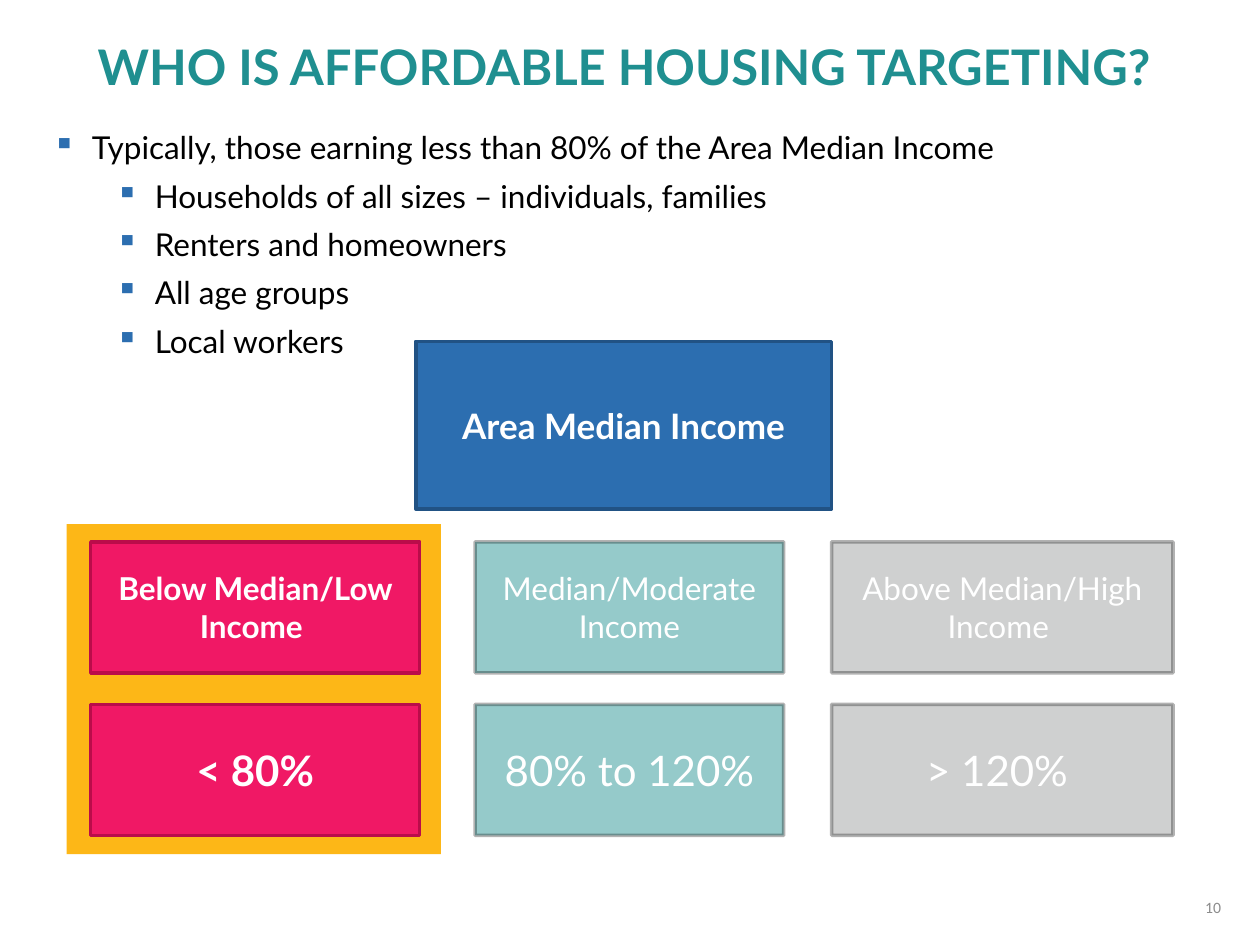
from pptx import Presentation
from pptx.dml.color import RGBColor
from pptx.enum.shapes import MSO_SHAPE
from pptx.enum.text import MSO_ANCHOR, PP_ALIGN
from pptx.oxml.ns import qn
from pptx.util import Inches, Pt
from lxml.etree import SubElement

THEME = {
    "font": "Lato", "number_font": "Calibri",
    "teal": "1F8F90", "blue": "2C6EB0", "navy": "215284", "pink": "F01865",
    "crimson": "BA0C4A", "gray": "959898", "gold": "FDB717",
    "white": "FFFFFF", "black": "000000", "number": "8C8C8C",
    "title_pt": 28, "root_pt": 20, "body_pt": 18, "range_pt": 24, "number_pt": 9,
}

TITLE = "WHO IS AFFORDABLE HOUSING TARGETING? "
BULLETS = [
    (0, "Typically, those earning less than 80% of the Area Median Income"),
    (1, "Households of all sizes – individuals, families"),
    (1, "Renters and homeowners"),
    (1, "All age groups"),
    (1, "Local workers"),
]
ROOT = "Area Median Income"
# name, income range, left, width, fill, fill opacity %, line, line opacity %, bold
BANDS = [
    ("Below Median/Low Income ", "< 80%", 0.72, 2.61, "pink", 100, "crimson", 100, True),
    ("Median/Moderate Income", "80% to 120%", 3.77, 2.45, "teal", 47, "black", 30, False),
    ("Above Median/High Income ", "> 120% ", 6.6, 2.71, "gray", 45, "black", 30, False),
]
ROWS = [(4.3, "body_pt"), (5.59, "range_pt")]
BAND_HEIGHT = 1.04


def rgb(name):
    return RGBColor.from_string(THEME[name])


def set_opacity(fill_parent, percent):
    """Make the solid fill directly under the given XML element see-through."""
    if percent < 100:
        color = fill_parent.find(qn("a:solidFill")).find(qn("a:srgbClr"))
        SubElement(color, qn("a:alpha"), val=str(percent * 1000))


def add_run(p, text, size, color, bold=False, font="font"):
    r = p.add_run()
    r.text = text
    r.font.name = THEME[font]
    r.font.size = Pt(THEME[size])
    r.font.bold = bold
    r.font.color.rgb = rgb(color)


def add_text_box(s, box):
    tf = s.shapes.add_textbox(*map(Inches, box)).text_frame
    tf.word_wrap = True
    return tf


def add_box(s, box, fill, line=None, fill_opacity=100, line_opacity=100):
    sp = s.shapes.add_shape(MSO_SHAPE.RECTANGLE, *map(Inches, box))
    sp.shadow.inherit = False
    sp.fill.solid()
    sp.fill.fore_color.rgb = rgb(fill)
    set_opacity(sp.element.spPr, fill_opacity)
    if line:
        sp.line.color.rgb = rgb(line)
        sp.line.width = Pt(2)
        set_opacity(sp.element.spPr.find(qn("a:ln")), line_opacity)
    else:
        sp.line.fill.background()
    return sp


def add_label(sp, text, size, bold):
    tf = sp.text_frame
    tf.word_wrap = True
    tf.vertical_anchor = MSO_ANCHOR.MIDDLE
    p = tf.paragraphs[0]
    p.alignment = PP_ALIGN.CENTER
    add_run(p, text, size, "white", bold)


def add_bullet(p, level):
    p.level = level
    pPr = p._p.get_or_add_pPr()
    pPr.set("marL", str(Inches(0.31 + 0.5 * level)))
    pPr.set("indent", str(Inches(-0.31)))
    color = SubElement(pPr, qn("a:buClr"))
    SubElement(color, qn("a:srgbClr"), val=THEME["blue"])
    SubElement(pPr, qn("a:buChar"), char="▪")


def add_bullets(s, box):
    tf = add_text_box(s, box)
    for i, (level, text) in enumerate(BULLETS):
        p = tf.add_paragraph() if i else tf.paragraphs[0]
        add_bullet(p, level)
        if i:
            p.space_before = Pt(6)
        add_run(p, text, "body_pt", "black")


def main():
    prs = Presentation()
    prs.slide_width, prs.slide_height = Inches(10), Inches(7.5)
    s = prs.slides.add_slide(prs.slide_layouts[6])

    add_box(s, (0.53, 4.16, 2.97, 2.62), "gold")

    p = add_text_box(s, (0, 0.24, 10, 0.57)).paragraphs[0]
    p.alignment = PP_ALIGN.CENTER
    add_run(p, TITLE, "title_pt", "teal", bold=True)

    tf = add_text_box(s, (7.56, 7, 2.23, 0.4))
    tf.vertical_anchor = MSO_ANCHOR.MIDDLE
    tf.paragraphs[0].alignment = PP_ALIGN.RIGHT
    add_run(tf.paragraphs[0], "10", "number_pt", "number", font="number_font")

    for name, span, left, width, fill, fill_op, line, line_op, bold in BANDS:
        for text, (top, size) in zip((name, span), ROWS):
            sp = add_box(s, (left, top, width, BAND_HEIGHT), fill, line, fill_op, line_op)
            add_label(sp, text, size, bold)

    add_bullets(s, (0.32, 0.97, 8.79, 1.95))
    add_label(add_box(s, (3.3, 2.71, 3.3, 1.33), "blue", "navy"), ROOT, "root_pt", True)

    prs.save("out.pptx")


if __name__ == "__main__":
    main()
